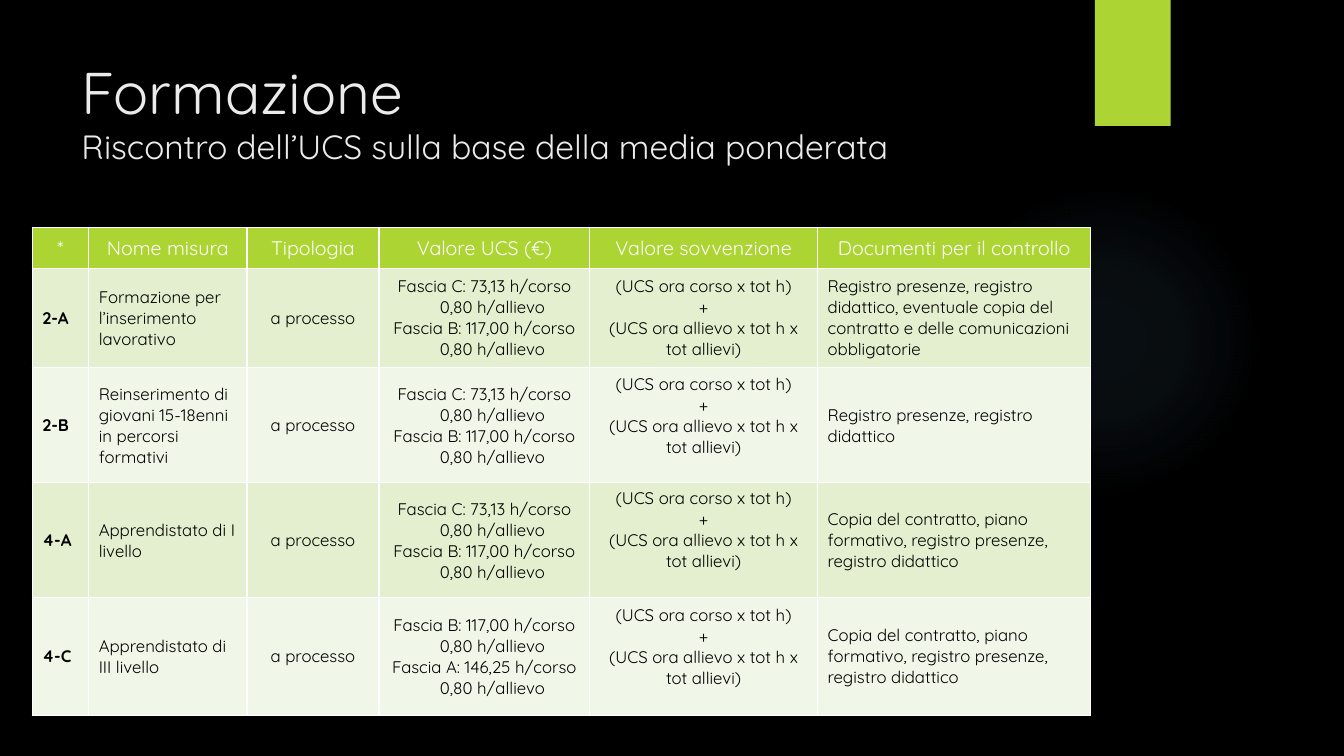
from lxml import etree
from pptx import Presentation
from pptx.dml.color import RGBColor
from pptx.enum import shapes, text
from pptx.oxml import ns
from pptx.util import Inches, Pt

FONT = "Quicksand"
BLACK = RGBColor(0x00, 0x00, 0x00)
WHITE = RGBColor(0xFF, 0xFF, 0xFF)
LIGHT = RGBColor(0xEB, 0xEB, 0xEB)
LIME = RGBColor(0xAC, 0xD4, 0x33)
BANDS = [RGBColor(0xE3, 0xEF, 0xCE), RGBColor(0xF1, 0xF7, 0xE8)]
GLOW = RGBColor(0x7A, 0xC4, 0xF0)
GLOW_STOPS = [(0, 7), (36, 6), (69, 0)]

HEADING = [("Formazione", 42), ("Riscontro dell’UCS sulla base della media ponderata", 24)]
HEADERS = ["*", "Nome misura", "Tipologia", "Valore UCS (€)",
           "Valore sovvenzione", "Documenti per il controllo"]
PROCESS = "a processo"
HOURLY = "0,80 h/allievo"
BAND_A, BAND_B, BAND_C = ("Fascia A: 146,25 h/corso", "Fascia B: 117,00 h/corso",
                          "Fascia C: 73,13 h/corso")
C_THEN_B = [BAND_C, HOURLY, BAND_B, HOURLY]
B_THEN_A = [BAND_B, HOURLY, BAND_A, HOURLY]
GRANT = ["(UCS ora corso x tot h)", "+", "(UCS ora allievo x tot h x tot allievi)"]
CONTRACT = "Copia del contratto, piano formativo, registro presenze, registro didattico"
MEASURES = [
    ("2-A", "Formazione per l’inserimento lavorativo", C_THEN_B,
     "Registro presenze, registro didattico, eventuale copia del contratto "
     "e delle comunicazioni obbligatorie"),
    ("2-B", "Reinserimento di giovani 15-18enni in percorsi formativi", C_THEN_B,
     "Registro presenze, registro didattico"),
    ("4-A", "Apprendistato di I livello", C_THEN_B, CONTRACT),
    ("4-C", "Apprendistato di III livello", B_THEN_A, CONTRACT),
]
COLUMN_WIDTHS = [0.56, 1.57, 1.31, 2.09, 2.26, 2.71]
ROW_HEIGHTS = [0.4, 0.99, 1.14, 1.14, 1.17]
CENTRED_COLUMNS = (2, 3, 4)
GRANT_COLUMN = 4


def add_panel(slide, kind, left, top, width, height):
    panel = slide.shapes.add_shape(kind, Inches(left), Inches(top), Inches(width), Inches(height))
    panel.shadow.inherit = False
    panel.line.fill.background()
    return panel


def fill_with_glow(panel):
    panel.fill.background()
    properties = panel.fill._xPr
    gradient = etree.Element(ns.qn("a:gradFill"), rotWithShape="1")
    stops = etree.SubElement(gradient, ns.qn("a:gsLst"))
    for position, opacity in GLOW_STOPS:
        stop = etree.SubElement(stops, ns.qn("a:gs"), pos=str(position * 1000))
        colour = etree.SubElement(stop, ns.qn("a:srgbClr"), val=str(GLOW))
        etree.SubElement(colour, ns.qn("a:alpha"), val=str(opacity * 1000))
    circle = etree.SubElement(gradient, ns.qn("a:path"), path="circle")
    etree.SubElement(circle, ns.qn("a:fillToRect"), l="50000", t="50000", r="50000", b="50000")
    properties.replace(properties.find(ns.qn("a:noFill")), gradient)


def add_borders(cell):
    properties = cell._tc.get_or_add_tcPr()
    for index, side in enumerate(("lnL", "lnR", "lnT", "lnB")):
        line = etree.Element(ns.qn("a:" + side), w=str(Pt(1)))
        solid = etree.SubElement(line, ns.qn("a:solidFill"))
        etree.SubElement(solid, ns.qn("a:srgbClr"), val=str(WHITE))
        properties.insert(index, line)


def write(frame, lines, colour, align=None, bold=False):
    for index, (line, size) in enumerate(lines):
        paragraph = frame.paragraphs[0] if index == 0 else frame.add_paragraph()
        paragraph.text = line
        paragraph.alignment = align
        if line == HOURLY:
            paragraph._p.get_or_add_pPr().set("marL", str(Inches(0.16)))
        paragraph.font.name = FONT
        paragraph.font.size = Pt(size)
        paragraph.font.bold = bold
        paragraph.font.color.rgb = colour


def fill_table(table):
    for column, width in zip(table.columns, COLUMN_WIDTHS):
        column.width = Inches(width)
    for row, height in zip(table.rows, ROW_HEIGHTS):
        row.height = Inches(height)
    rows = [HEADERS] + [(code, name, PROCESS, values, GRANT, documents)
                        for code, name, values, documents in MEASURES]
    for r, row in enumerate(rows):
        header = r == 0
        for c, content in enumerate(row):
            cell = table.cell(r, c)
            cell.vertical_anchor = text.MSO_ANCHOR.MIDDLE
            cell.fill.solid()
            cell.fill.fore_color.rgb = LIME if header else BANDS[(r - 1) % 2]
            add_borders(cell)
            if c == GRANT_COLUMN and r > 1:
                cell.margin_bottom = Inches(0.25)
            lines = content if isinstance(content, list) else [content]
            centred = header or c in CENTRED_COLUMNS
            write(cell.text_frame, [(line, 14 if header else 12) for line in lines],
                  WHITE if header else BLACK,
                  text.PP_ALIGN.CENTER if centred else text.PP_ALIGN.LEFT,
                  bold=c == 0 and not header)


def main():
    deck = Presentation()
    deck.slide_width, deck.slide_height = Inches(13.33), Inches(7.5)
    slide = deck.slides.add_slide(deck.slide_layouts[6])
    slide.background.fill.solid()
    slide.background.fill.fore_color.rgb = BLACK

    fill_with_glow(add_panel(slide, shapes.MSO_SHAPE.OVAL, 9.41, 1.83, 3.08, 3.08))
    ribbon = add_panel(slide, shapes.MSO_SHAPE.RECTANGLE, 10.86, 0, 0.75, 1.25)
    ribbon.fill.solid()
    ribbon.fill.fore_color.rgb = LIME

    heading = slide.shapes.add_textbox(Inches(0.71), Inches(0.5), Inches(10.29), Inches(1.53))
    heading.text_frame.word_wrap = True
    write(heading.text_frame, HEADING, LIGHT)

    measures = slide.shapes.add_table(
        len(ROW_HEIGHTS), len(COLUMN_WIDTHS), Inches(0.32), Inches(2.26),
        Inches(sum(COLUMN_WIDTHS)), Inches(sum(ROW_HEIGHTS)))
    fill_table(measures.table)
    deck.save("out.pptx")


if __name__ == "__main__":
    main()
